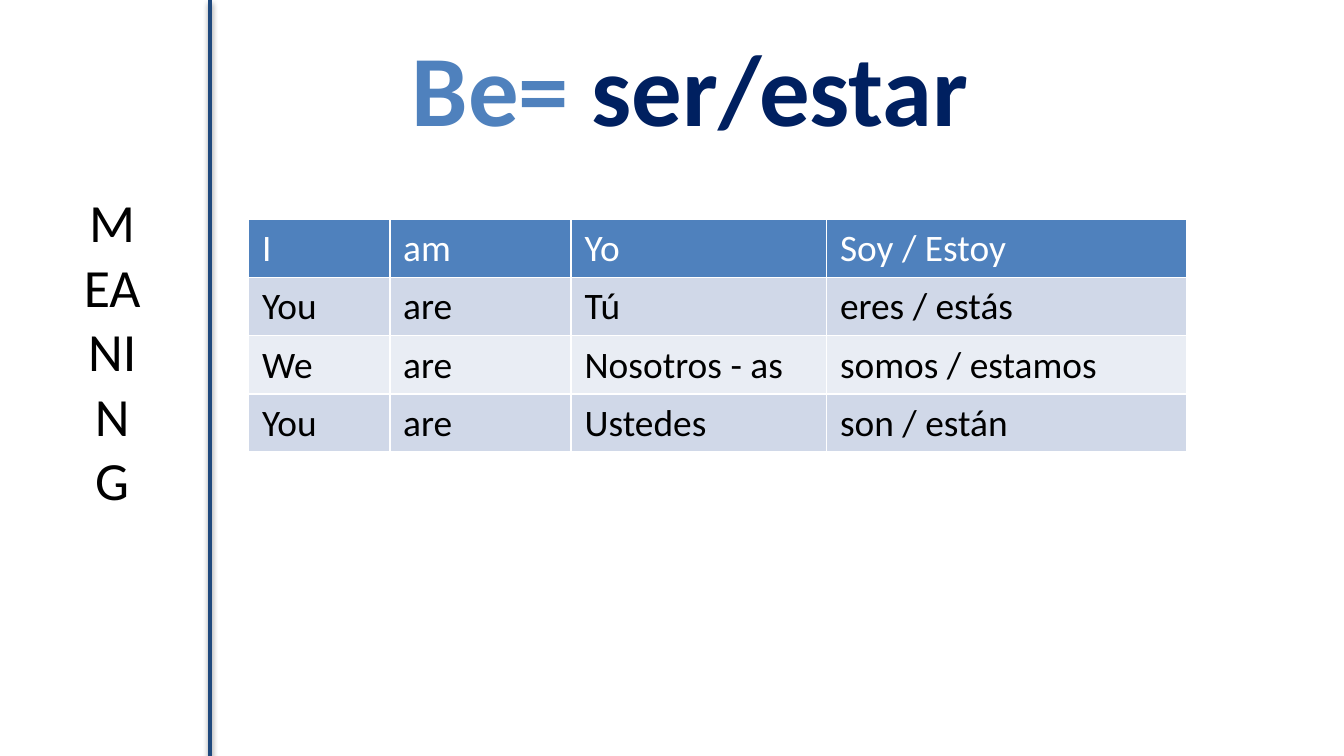
from dataclasses import dataclass
from lxml.etree import SubElement
from pptx import Presentation
from pptx.dml.color import RGBColor
from pptx.enum.shapes import MSO_CONNECTOR
from pptx.enum.text import MSO_ANCHOR, MSO_AUTO_SIZE, PP_ALIGN
from pptx.oxml import parse_xml
from pptx.oxml.ns import nsdecls, qn
from pptx.util import Inches, Pt


@dataclass(frozen=True)
class Theme:
    font: str = "Calibri"
    blue: str = "4F81BD"
    navy: str = "002060"
    rule: str = "1F497D"
    bands: tuple = ("E9EDF4", "D0D8E8")
    white: str = "FFFFFF"
    black: str = "000000"
    side: float = 28.8
    head: float = 54
    cell: float = 20


THEME = Theme()
WIDE = 10
HIGH = WIDE * 9 / 16
COLS = (1.05, 1.35, 1.9, 2.68)
ROW = 0.43
VERBS = (
    ("I", "am", "Yo", "Soy / Estoy"),
    ("You", "are", "Tú", "eres / estás"),
    ("We", "are", "Nosotros - as", "somos / estamos"),
    ("You", "are", "Ustedes", "son / están"),
)


def color(code):
    return RGBColor.from_string(code)


def style(par, size, code=None, bold=False):
    font = par.font
    font.name, font.size, font.bold = THEME.font, Pt(size), bold
    if code:
        font.color.rgb = color(code)


def place(shape, left, top, width, height):
    shape.left, shape.top = Inches(left), Inches(top)
    shape.width, shape.height = Inches(width), Inches(height)


def add_side(slide, text):
    # The narrow title wraps into a column of letters
    title = slide.shapes.title
    place(title, 0.51, 1.15, 0.65, 2.91)
    frame = title.text_frame
    frame.text = text
    frame.word_wrap = True
    frame.auto_size = MSO_AUTO_SIZE.NONE
    frame.vertical_anchor = MSO_ANCHOR.MIDDLE
    par = frame.paragraphs[0]
    par.alignment = PP_ALIGN.CENTER
    style(par, THEME.side, THEME.black)


def add_head(slide, parts):
    box = slide.shapes.add_textbox(
        Inches(2.94), Inches(0.14), Inches(4.39), Inches(1.01))
    box.text_frame.word_wrap = False
    box.text_frame.auto_size = MSO_AUTO_SIZE.SHAPE_TO_FIT_TEXT
    par = box.text_frame.paragraphs[0]
    par.alignment = PP_ALIGN.CENTER
    style(par, THEME.head, bold=True)
    for text, code in parts:
        run = par.add_run()
        run.text = text
        run.font.color.rgb = color(code)


def add_rule(slide, left):
    line = slide.shapes.add_connector(
        MSO_CONNECTOR.STRAIGHT, Inches(left), 0, Inches(left), Inches(HIGH))
    line.line.color.rgb = color(THEME.rule)
    line.line.width = Pt(2)
    # Soft shadow straight below
    line._element.spPr.append(parse_xml(
        f'<a:effectLst {nsdecls("a")}><a:outerShdw blurRad="{Pt(3.1)}" '
        f'dist="{Pt(1.6)}" dir="5400000" rotWithShape="0">'
        f'<a:srgbClr val="{THEME.black}"><a:alpha val="38000"/></a:srgbClr>'
        '</a:outerShdw></a:effectLst>'))


def edge(cell):
    # Borders come before the fill in the cell properties
    props = cell._tc.get_or_add_tcPr()
    for side in ("lnL", "lnR", "lnT", "lnB"):
        line = SubElement(props, qn(f"a:{side}"), w=str(Pt(1)))
        fill = SubElement(line, qn("a:solidFill"))
        SubElement(fill, qn("a:srgbClr"), val=THEME.white)


def add_grid(slide, rows, left, top):
    table = slide.shapes.add_table(
        len(rows), len(COLS), Inches(left), Inches(top),
        Inches(sum(COLS)), Inches(ROW * len(rows))).table
    for col, width in zip(table.columns, COLS):
        col.width = Inches(width)
    for r, row in enumerate(rows):
        back = THEME.bands[r % 2] if r else THEME.blue
        ink = THEME.black if r else THEME.white
        for c, text in enumerate(row):
            cell = table.cell(r, c)
            cell.text = text
            edge(cell)
            cell.fill.solid()
            cell.fill.fore_color.rgb = color(back)
            style(cell.text_frame.paragraphs[0], THEME.cell, ink)


def main():
    deck = Presentation()
    deck.slide_width, deck.slide_height = Inches(WIDE), Inches(HIGH)
    slide = deck.slides.add_slide(deck.slide_layouts[5])
    add_side(slide, "MEANING")
    add_head(slide, (("Be= ", THEME.blue), ("ser/estar", THEME.navy)))
    add_rule(slide, 1.56)
    add_grid(slide, VERBS, 1.85, 1.63)
    deck.save("out.pptx")


if __name__ == "__main__":
    main()
